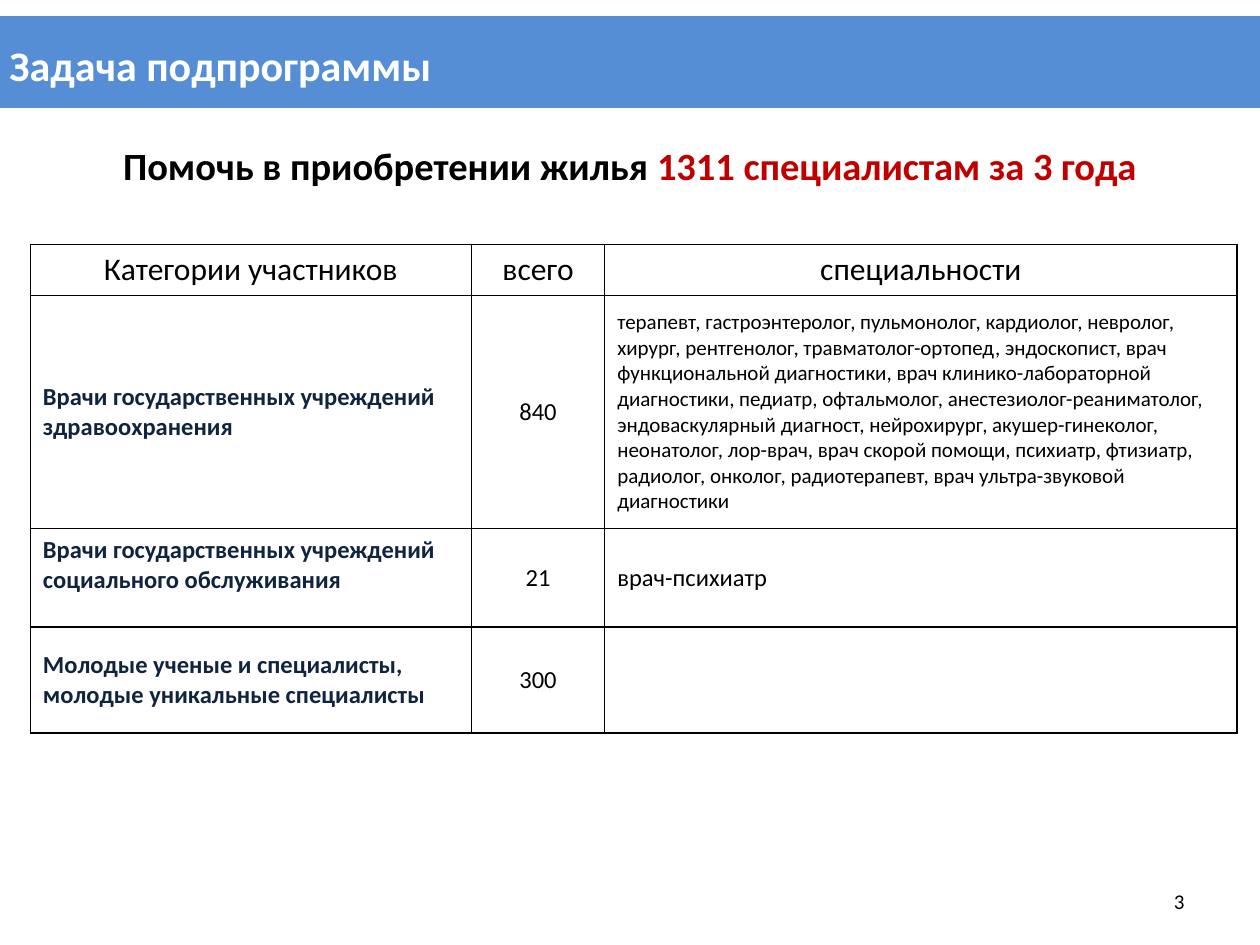
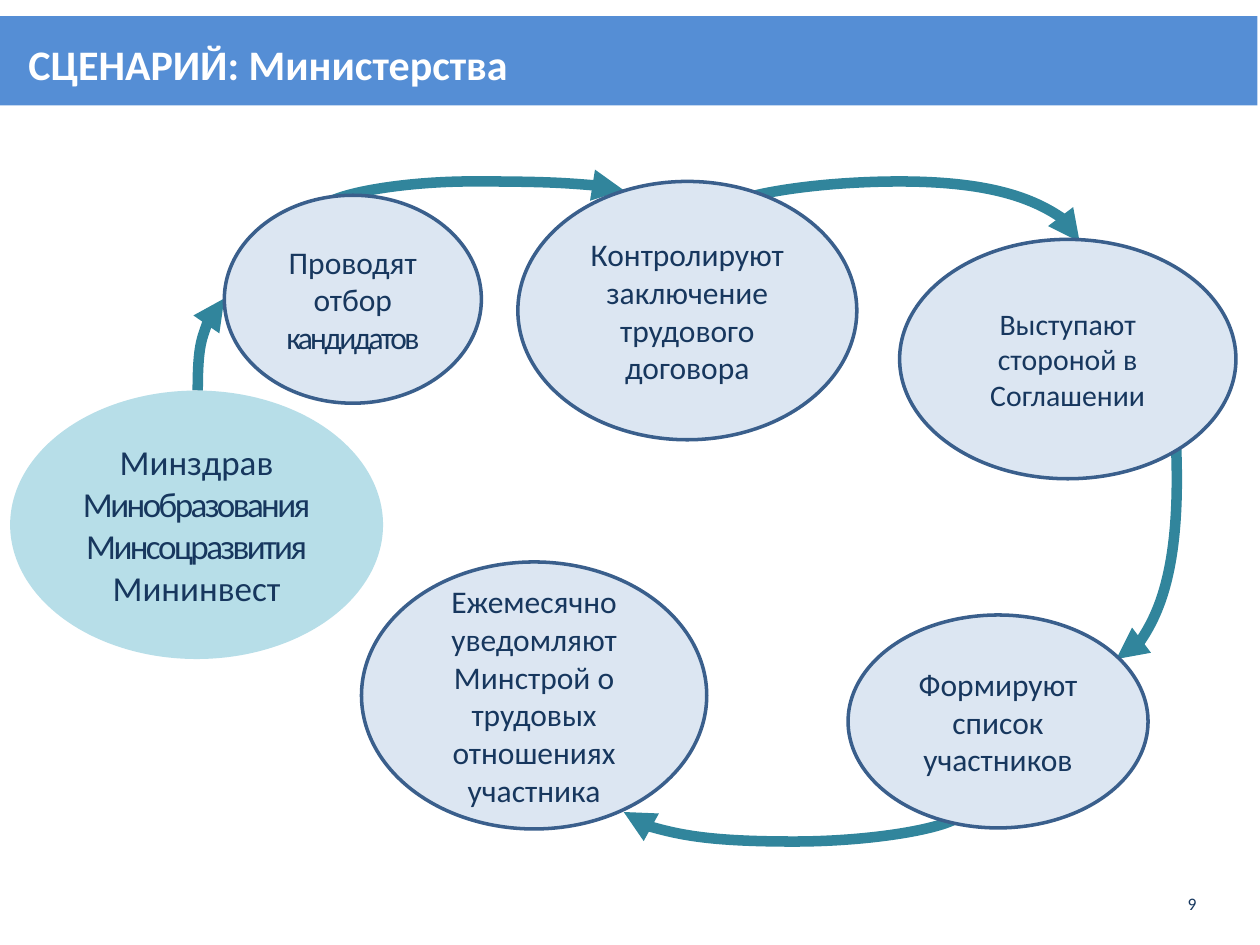
from dataclasses import dataclass
from lxml import etree
from pptx import Presentation
from pptx import util as u
from pptx.dml.color import RGBColor
from pptx.enum import shapes, text
from pptx.oxml import ns

Pt = u.Pt
MID = text.MSO_ANCHOR.MIDDLE
LEFT, MIDDLE, RIGHT = text.PP_ALIGN.LEFT, text.PP_ALIGN.CENTER, text.PP_ALIGN.RIGHT


@dataclass
class Theme:
    font: str = "Calibri"
    band: str = "558ED5"
    white: str = "FFFFFF"
    black: str = "000000"
    red: str = "C00000"
    dark: str = "0F243E"
    navy: str = "17375E"
    teal: str = "31859C"
    pale: str = "DCE6F2"
    aqua: str = "B7DEE8"
    edge: str = "3A5F8C"
    title: int = 24
    lead: int = 22
    hub: int = 20
    large: int = 18
    step: int = 17
    body: int = 14
    small: int = 12
    tiny: int = 10


look = Theme()


def style(para, size, color, align=LEFT, bold=False):
    para.alignment = align
    font = para.font
    font.name, font.size, font.bold = look.font, Pt(size), bold
    font.color.rgb = RGBColor.from_string(color)


def add(parent, tag, **attrs):
    return etree.SubElement(parent, ns.qn(tag), attrs)


deck = Presentation()
deck.slide_width, deck.slide_height = Pt(720), Pt(540)

# Title bands and page numbers
# title, band width and height, text indent, number, number box, size, colour, alignment
pages = [
    ("Задача подпрограммы", 720, 52.5, 5.4, "3",
     (516, 500.5, 168, 28.8), look.small, look.black, RIGHT),
    ("СЦЕНАРИЙ: Министерства", 718.5, 51, 16.2, "9",
     (667.5, 502.5, 27.4, 27.4), look.tiny, look.navy, MIDDLE),
]
slides = []
for name, wide, high, indent, num, spot, size, color, align in pages:
    slide = deck.slides.add_slide(deck.slide_layouts[5])
    slides.append(slide)
    band = slide.shapes.title
    band.left, band.top, band.width, band.height = Pt(0), Pt(9.2), Pt(wide), Pt(high)
    band.fill.solid()
    band.fill.fore_color.rgb = RGBColor.from_string(look.band)
    frame = band.text_frame
    frame.text = name
    frame.auto_size = text.MSO_AUTO_SIZE.NONE
    frame.vertical_anchor = MID
    frame.margin_left, frame.margin_top = Pt(indent), Pt(8.6)
    frame.margin_right = frame.margin_bottom = 0
    frame.paragraphs[0].line_spacing = 0.8
    style(frame.paragraphs[0], look.title, look.white, bold=True)

    frame = slide.shapes.add_textbox(*map(Pt, spot)).text_frame
    frame.word_wrap = True
    frame.vertical_anchor = MID
    frame.text = num
    if align == MIDDLE:
        frame.margin_left = frame.margin_right = 0
    style(frame.paragraphs[0], size, color, align)

task, plan = slides

# Lead line
frame = task.shapes.add_textbox(Pt(39.6), Pt(77.8), Pt(640.8), Pt(33.8)).text_frame
frame.word_wrap = True
para = frame.paragraphs[0]
style(para, look.lead, look.black, MIDDLE, True)
para.add_run().text = "Помочь в приобретении жилья "
goal = para.add_run()
goal.text = "1311 специалистам за 3 года"
goal.font.color.rgb = RGBColor.from_string(look.red)

# Table of participants
rows = [
    ("Категории участников", "всего", "специальности"),
    ("Врачи государственных учреждений здравоохранения", "840",
     "терапевт, гастроэнтеролог, пульмонолог, кардиолог, невролог, хирург, "
     "рентгенолог, травматолог-ортопед, эндоскопист, врач функциональной "
     "диагностики, врач клинико-лабораторной диагностики, педиатр, офтальмолог, "
     "анестезиолог-реаниматолог, эндоваскулярный диагност, нейрохирург, "
     "акушер-гинеколог, неонатолог, лор-врач, врач скорой помощи, психиатр, "
     "фтизиатр, радиолог, онколог, радиотерапевт, врач ультра-звуковой диагностики"),
    ("Врачи государственных учреждений социального обслуживания", "21",
     "врач-психиатр"),
    ("Молодые ученые и специалисты, молодые уникальные специалисты", "300", ""),
]
heights = [29.2, 133.2, 56.2, 60.5]
widths = [252, 76.3, 361.4]
grid = task.shapes.add_table(len(rows), len(widths), Pt(17.3), Pt(139.7),
                             Pt(sum(widths)), Pt(sum(heights))).table
grid.first_row = grid.horz_banding = False
for col, wide in zip(grid.columns, widths):
    col.width = Pt(wide)
for r, (row, high) in enumerate(zip(rows, heights)):
    grid.rows[r].height = Pt(high)
    for c, words in enumerate(row):
        cell = grid.cell(r, c)
        cell.text = words
        cell.vertical_anchor = text.MSO_ANCHOR.TOP if (r, c) == (2, 0) else MID
        para = cell.text_frame.paragraphs[0]
        if r == 0:
            style(para, look.large, look.black, MIDDLE)
        elif c == 0:
            style(para, look.body, look.dark, bold=True)
        elif c == 1:
            style(para, look.body, look.black, MIDDLE)
        else:
            style(para, look.small if r == 1 else look.body, look.black)
        props = cell._tc.get_or_add_tcPr()
        for side in "LRTB":
            edge = add(props, "a:ln" + side, w=str(Pt(1)))
            add(add(edge, "a:solidFill"), "a:srgbClr", val=look.black)
        cell.fill.background()

# Curved arrows: start, end, quarter turn in degrees, bulge along the first direction
arrows = [
    ((550.8, 463), (356.4, 464), 90, 18),
    ((654.5, 171.4), (637.9, 376.6), 0, 18),
    ((183.6, 120.2), (356.4, 108.7), 90, -16.5),
    ((411.1, 121.7), (617, 138.2), 270, 18),
    ((113, 223.2), (128.2, 170.6), 90, None),
]
for (x1, y1), (x2, y2), turn, bulge in arrows:
    dx, dy = x2 - x1, y2 - y1
    if turn == 90:
        dx, dy = dy, -dx
    elif turn == 270:
        dx, dy = -dy, dx
    mx, my = (x1 + x2) / 2, (y1 + y2) / 2
    ends = (mx - dx / 2, my - dy / 2, mx + dx / 2, my + dy / 2)
    arc = plan.shapes.add_connector(shapes.MSO_CONNECTOR.CURVE, *map(Pt, ends))
    arc.line.color.rgb = RGBColor.from_string(look.teal)
    arc.line.width = Pt(6)
    props = arc._element.spPr
    props.find(ns.qn("a:xfrm")).set("rot", str(turn * 60000))
    geom = props.find(ns.qn("a:prstGeom"))
    if bulge is None:
        geom.set("prst", "curvedConnector2")
    else:
        add(geom.find(ns.qn("a:avLst")), "a:gd", name="adj1",
            fmla=f"val {round(bulge / dx * 100000)}")
    add(props.find(ns.qn("a:ln")), "a:tailEnd", type="triangle")
    add(props, "a:effectLst")

# Ovals: box, size, fill, lines; a line is a list of (words, tight)
ovals = [
    ((5.8, 223.2, 213.1, 153.4), look.hub, look.aqua,
     [[("Минздрав", False)], [("Минобразования", True)],
      [("Минсоцразвития", True)], [("Мининвест", False)]]),
    ((128.2, 111.6, 146.9, 118.8), look.large, look.pale,
     [[("Проводят отбор ", False), ("кандидатов", True)]]),
    ((206.6, 321.1, 197.3, 152.6), look.large, look.pale,
     [[("Ежемесячно уведомляют Минстрой о трудовых отношениях участника", False)]]),
    ((484.6, 351.4, 171.4, 121.7), look.large, look.pale,
     [[("Формируют список участников", False)]]),
    ((514.1, 136.8, 192.2, 136.8), look.step, look.pale,
     [[("Выступают стороной в Соглашении", False)]]),
    ((295.9, 103.7, 193.7, 147.6), look.large, look.pale,
     [[("Контролируют заключение трудового договора", False)]]),
]
for box, size, fill, lines in ovals:
    oval = plan.shapes.add_shape(shapes.MSO_SHAPE.OVAL, *map(Pt, box))
    oval.shadow.inherit = False
    oval.fill.solid()
    oval.fill.fore_color.rgb = RGBColor.from_string(fill)
    if fill == look.aqua:
        oval.line.fill.background()
    else:
        oval.line.color.rgb = RGBColor.from_string(look.edge)
        oval.line.width = Pt(2)
    frame = oval.text_frame
    frame.word_wrap = True
    frame.vertical_anchor = MID
    for i, line in enumerate(lines):
        para = frame.add_paragraph() if i else frame.paragraphs[0]
        style(para, size, look.navy, MIDDLE)
        for words, tight in line:
            run = para.add_run()
            run.text = words
            if tight:
                run._r.get_or_add_rPr().set("spc", "-150")

deck.save("out.pptx")
